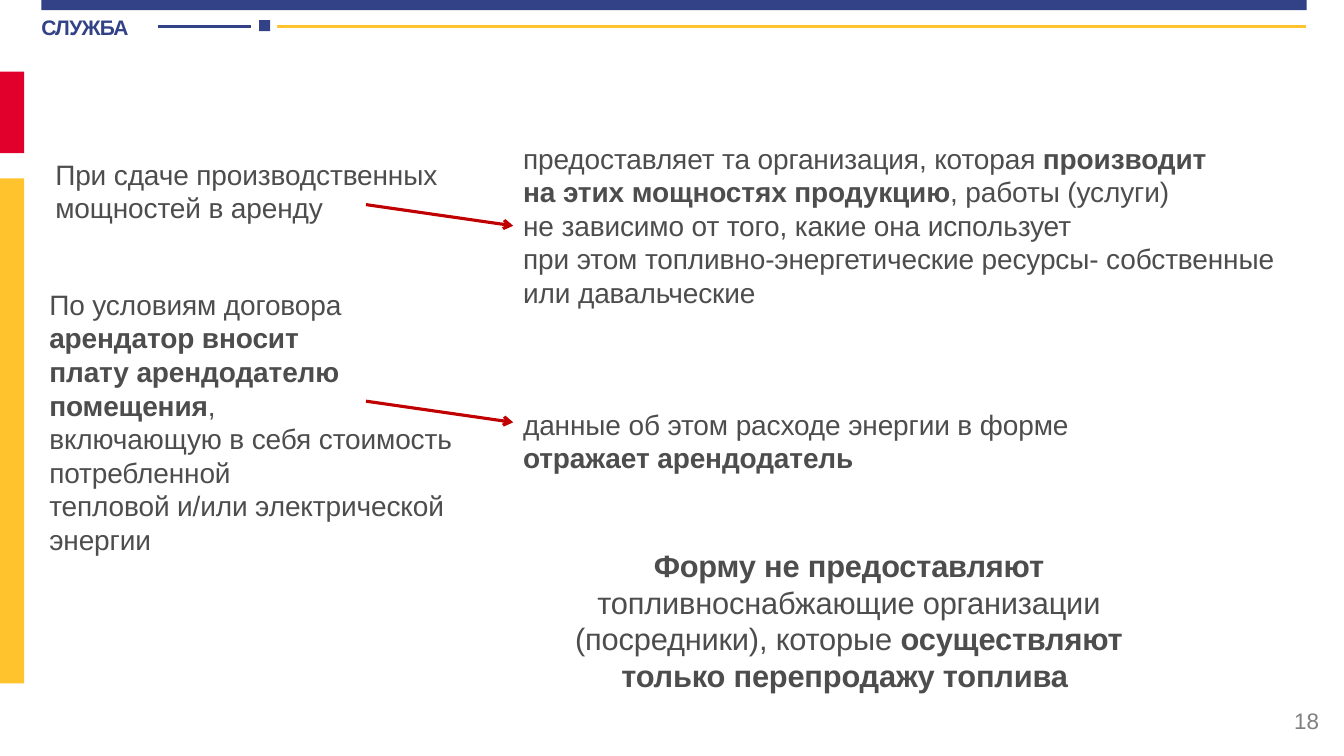
from lxml import etree
from pptx import Presentation
from pptx import util as u
from pptx.dml.color import RGBColor
from pptx.enum import shapes, text
from pptx.oxml import ns

BLUE = RGBColor(0x33, 0x42, 0x86)
RED = RGBColor(0xE1, 0x00, 0x2B)
YELLOW = RGBColor(0xFF, 0xC3, 0x2E)
ARROW_RED = RGBColor(0xC0, 0x00, 0x00)
DARK_GREY = RGBColor(0x4D, 0x4D, 0x4D)
PAGE_GREY = RGBColor(0x80, 0x80, 0x80)
WHITE = RGBColor(0xFF, 0xFF, 0xFF)


def add_run(paragraph, words, size=20, color=DARK_GREY, bold=False,
            font="Arial", tracking=-0.1):
    """Add formatted text; tracking is letter spacing in points."""
    run = paragraph.add_run()
    run.text = words
    run.font.name = font
    run.font.size = u.Pt(size)
    run.font.bold = bold
    run.font.color.rgb = color
    if tracking:
        run.font._element.set("spc", str(round(tracking * 100)))


class SlideBuilder:
    """Draws each kind of element on the current slide."""

    def __init__(self, slide):
        self.slide = slide

    def box(self, left, top, width, height, color):
        shape = self.slide.shapes.add_shape(
            shapes.MSO_SHAPE.RECTANGLE, u.Inches(left), u.Inches(top),
            u.Inches(width), u.Inches(height))
        shape.shadow.inherit = False
        shape.fill.solid()
        shape.fill.fore_color.rgb = color
        shape.line.fill.background()

    def line(self, start, end, color, width=2, arrow=False):
        connector = self.slide.shapes.add_connector(
            shapes.MSO_CONNECTOR.STRAIGHT,
            *(u.Inches(value) for value in (*start, *end)))
        connector.line.color.rgb = color
        connector.line.width = u.Pt(width)
        properties = connector._element.spPr
        if arrow:
            etree.SubElement(connector.line._get_or_add_ln(),
                             ns.qn("a:tailEnd"), type="arrow")
        etree.SubElement(properties, ns.qn("a:effectLst"))

    def text(self, left, top, width, height, paragraphs, wrap=True,
             align=text.PP_ALIGN.LEFT, anchor=text.MSO_ANCHOR.TOP,
             insets=(0.1, 0.05, 0.1, 0.05), **style):
        """Each paragraph is a list of (words, bold) pairs."""
        shape = self.slide.shapes.add_textbox(
            u.Inches(left), u.Inches(top), u.Inches(width), u.Inches(height))
        frame = shape.text_frame
        frame.word_wrap = wrap
        frame.auto_size = text.MSO_AUTO_SIZE.SHAPE_TO_FIT_TEXT
        frame.vertical_anchor = anchor
        (frame.margin_left, frame.margin_top, frame.margin_right,
         frame.margin_bottom) = (u.Inches(inset) for inset in insets)
        for index, runs in enumerate(paragraphs):
            paragraph = frame.add_paragraph() if index else frame.paragraphs[0]
            paragraph.alignment = align
            for words, bold in runs:
                add_run(paragraph, words, bold=bold, **style)


def main():
    presentation = Presentation()
    presentation.slide_width = u.Inches(13.33)
    presentation.slide_height = u.Inches(7.5)
    builder = SlideBuilder(
        presentation.slides.add_slide(presentation.slide_layouts[6]))

    # Header and side bars
    builder.text(0.4, 0.12, 1.15, 0.27, [[("СЛУЖБА", True)]], size=15,
                 color=BLUE, tracking=-0.5, insets=(0.01, 0.02, 0, 0))
    builder.box(0.41, 0, 12.55, 0.1, BLUE)
    builder.box(0, 0.71, 0.24, 0.81, RED)
    builder.box(0, 1.77, 0.24, 5.01, YELLOW)
    builder.line((1.57, 0.26), (2.69, 0.26), BLUE)
    builder.line((2.69, 0.26), (12.95, 0.26), YELLOW)
    builder.box(2.49, 0.2, 0.26, 0.11, WHITE)
    builder.box(2.57, 0.2, 0.11, 0.11, BLUE)

    # Leased production capacity
    builder.text(0.45, 1.51, 4.09, 0.77, [
        [("При сдаче производственных", False)],
        [("мощностей в аренду", False)],
    ], wrap=False)
    builder.text(5.09, 1.35, 7.78, 1.78, [
        [("предоставляет та организация, которая ", False),
         ("производит", True)],
        [("на этих мощностях продукцию", True),
         (", работы (услуги)", False)],
        [("не зависимо от того, какие она использует", False)],
        [("при этом топливно-энергетические ресурсы- собственные", False)],
        [("или давальческие", False)],
    ], wrap=False)

    # Rent that includes energy
    builder.text(0.39, 2.8, 4.35, 2.79, [
        [("По условиям договора ", False), ("арендатор вносит", True)],
        [("плату арендодателю помещения", True), (",", False)],
        [("включающую в себя стоимость потребленной", False)],
        [("тепловой и/или электрической энергии", False)],
    ])
    builder.text(5.09, 3.99, 6.66, 0.77, [
        [("данные об этом расходе энергии в форме ", False),
         ("отражает арендодатель", True)],
    ])

    # Arrows from condition to answer
    for top in (2.03, 3.98):
        builder.line((3.63, top), (5.09, top + 0.21), ARROW_RED, 2.25,
                     arrow=True)

    # Who does not report
    builder.text(5.09, 5.37, 6.66, 1.58, [
        [("Форму не предоставляют ", True),
         ("топливноснабжающие организации (посредники), которые ", False),
         ("осуществляют только перепродажу топлива ", True)],
    ], align=text.PP_ALIGN.CENTER, size=22)

    # Page number
    builder.text(10.18, 6.95, 3, 0.4, [[("18", False)]], size=16,
                 color=PAGE_GREY, tracking=0, align=text.PP_ALIGN.RIGHT,
                 anchor=text.MSO_ANCHOR.MIDDLE)

    presentation.save("out.pptx")


if __name__ == "__main__":
    main()
